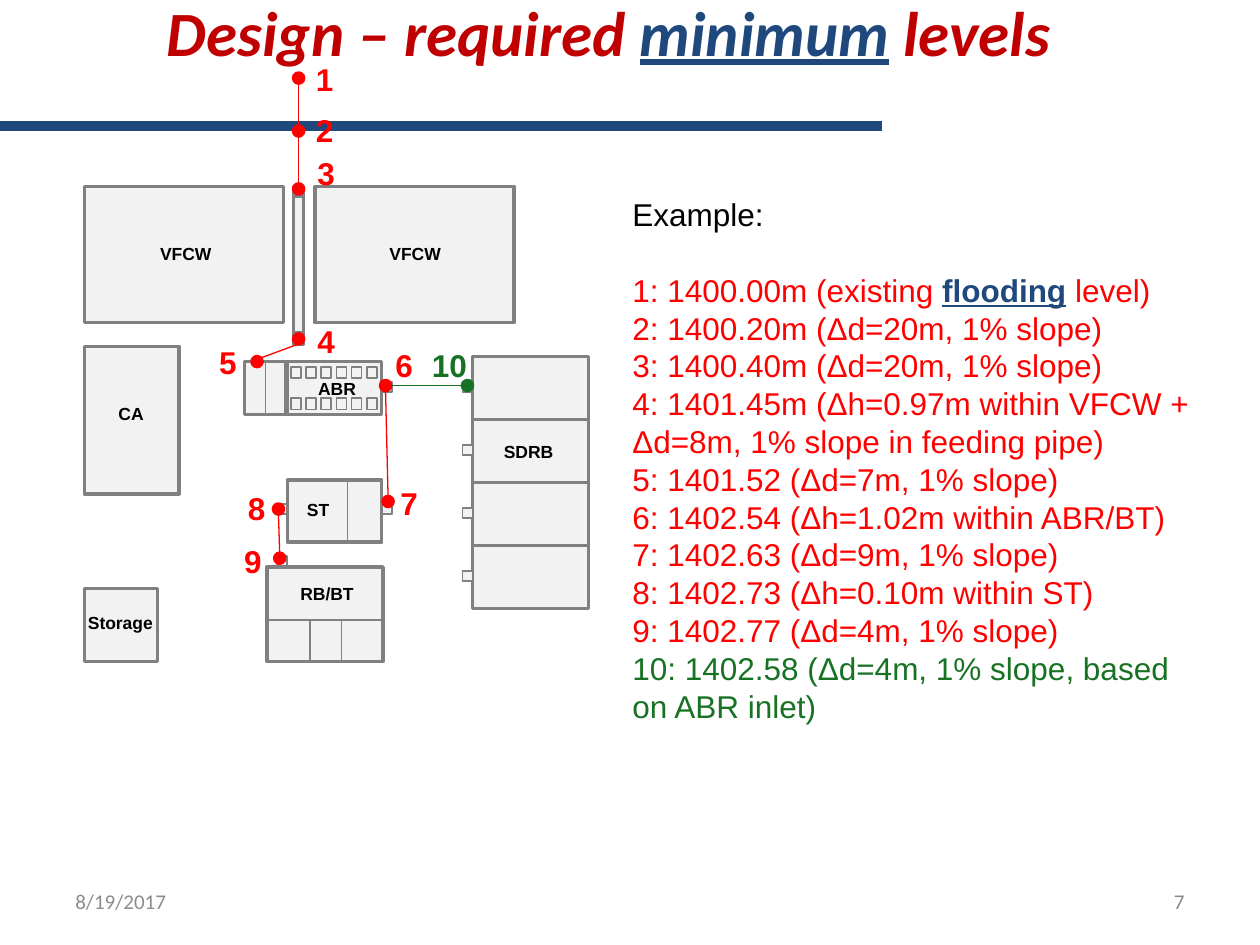
import pptx
import pptx.util
import pptx.dml.color
import pptx.enum.shapes
import pptx.enum.text
import pptx.oxml

RED, GREEN, NAVY, GREY, PALE = "FF0000", "187223", "1F497D", "808080", "F2F2F2"
LEFT, CENTER, RIGHT = (getattr(pptx.enum.text.PP_ALIGN, name) for name in ("LEFT", "CENTER", "RIGHT"))
MIDDLE = pptx.enum.text.MSO_ANCHOR.MIDDLE
RECTANGLE = pptx.enum.shapes.MSO_SHAPE.RECTANGLE
OVAL = pptx.enum.shapes.MSO_SHAPE.OVAL
UNIT = 0.08  # side of pipe ends, tabs and level dots
LINE_PITCH = 21.6

TITLE = [("Design – required ", "C00000", {}), ("minimum", NAVY, {"underline": True}),
         (" levels", "C00000", {})]
LEVELS = [
    [("1: 1400.00m (existing ", RED, {}), ("flooding", NAVY, {"bold": True, "underline": True}),
     (" level)", RED, {})],
    "2: 1400.20m (Δd=20m, 1% slope)",
    "3: 1400.40m (Δd=20m, 1% slope)",
    "4: 1401.45m (Δh=0.97m within VFCW + Δd=8m, 1% slope in feeding pipe)",
    "5: 1401.52 (Δd=7m, 1% slope)",
    "6: 1402.54 (Δh=1.02m within ABR/BT)",
    "7: 1402.63 (Δd=9m, 1% slope)",
    "8: 1402.73 (Δh=0.10m within ST)",
    "9: 1402.77 (Δd=4m, 1% slope)",
    [("10: 1402.58 (Δd=4m, 1% slope, based on ABR inlet)", GREEN, {})],
]
BED_TOPS = [2.83 + 0.5 * row for row in range(4)]
TANKS = [
    (0.67, 1.48, 1.58, 1.08), (2.5, 1.48, 1.58, 1.08),                    # VFCW
    (2.33, 1.48, UNIT, UNIT), (2.33, 2.65, UNIT, UNIT), (2.33, 1.56, UNIT, 1.08),  # feeding pipe
    *[(3.75, top, 0.92, 0.5) for top in BED_TOPS],                        # SDRB
    (2.28, 2.87, 0.75, 0.42), (1.94, 2.87, 0.33, 0.42),                   # ABR
    (2.28, 3.81, 0.75, 0.49),                                             # ST
    (2.12, 4.5, 0.92, 0.75),                                              # RB/BT
    (0.67, 4.67, 0.58, 0.58),                                             # Storage
    (0.67, 2.75, 0.75, 1.17),                                             # CA
]
TABS = [(3.67, top + 0.2) for top in BED_TOPS] + [(3.03, 3.03), (3.03, 4), (2.2, 4), (2.2, 4.41)]
CHAMBERS = [(2.31 + 0.12 * column, top) for top in (2.91, 3.16) for column in range(6)]
DIVIDERS = [(2.11, 3.28, 2.11, 2.87), (2.76, 3.81, 2.76, 4.31), (3.04, 4.92, 2.12, 4.92),
            (2.46, 5.25, 2.46, 4.92), (2.71, 5.25, 2.71, 4.92)]
TANK_LABELS = [  # text, left, top, width, fill
    ("VFCW", 1.06, 1.88, 0.83, PALE), ("VFCW", 2.88, 1.88, 0.83, PALE), ("SDRB", 3.78, 3.45, 0.83, PALE),
    ("ABR", 2.26, 2.95, 0.83, None), ("ST", 2.31, 3.91, 0.43, PALE), ("RB/BT", 2.22, 4.58, 0.75, PALE),
    ("Storage", 0.58, 4.81, 0.75, None), ("CA", 0.75, 3.15, 0.58, PALE),
]
POINTS = {  # level number: dot left, dot top, number left, number top
    1: (2.33, 0.58, 2.41, 0.43), 2: (2.33, 1, 2.41, 0.83), 3: (2.33, 1.46, 2.42, 1.17),
    4: (2.33, 2.65, 2.42, 2.51), 5: (2, 2.83, 1.64, 2.67), 6: (3.02, 3.02, 3.04, 2.7),
    7: (3.04, 3.94, 3.08, 3.79), 8: (2.17, 4, 1.87, 3.83), 9: (2.18, 4.39, 1.84, 4.25),
    10: (3.67, 3.02, 3.33, 2.7),
}
SITES = {"top": (0.5, 0), "bottom": (0.5, 1), "left": (0, 0.5), "right": (1, 0.5), "corner": (0.85, 0.15)}
PIPES = [(1, "bottom", 2, "top"), (2, "bottom", 3, "top"), (4, "bottom", 5, "corner"),
         (6, "bottom", 7, "top"), (8, "bottom", 9, "top"), (10, "left", 6, "right")]
WAVE_START = (0, 1.1)
WAVE = [  # two control points and an end point per curve
    ((0.39, 0.95), (0.78, 0.8), (1.39, 0.77)), ((1.99, 0.74), (2.95, 0.94), (3.63, 0.93)),
    ((4.3, 0.91), (4.84, 0.67), (5.44, 0.7)), ((6.04, 0.74), (6.91, 1.08), (7.24, 1.15)),
    ((7.56, 1.22), (7.34, 1.13), (7.37, 1.13)),
]

presentation = pptx.Presentation()
presentation.slide_width, presentation.slide_height = pptx.util.Inches(10), pptx.util.Inches(7.5)
slide = presentation.slides.add_slide(presentation.slide_layouts[6])


def inches(*values):
    return [pptx.util.Inches(value) for value in values]


def rgb(color):
    return pptx.dml.color.RGBColor.from_string(color)


def level_color(number):
    return GREEN if number == 10 else RED


def add_block(kind, box, fill, line, width):
    shape = slide.shapes.add_shape(kind, *inches(*box))
    shape.shadow.inherit = False
    shape.fill.solid()
    shape.fill.fore_color.rgb = rgb(fill)
    shape.line.color.rgb = rgb(line)
    shape.line.width = pptx.util.Pt(width)


def add_line(ends, color):
    connector = slide.shapes.add_connector(pptx.enum.shapes.MSO_CONNECTOR.STRAIGHT, *inches(*ends))
    connector.line.color.rgb = rgb(color)
    connector.line.width = pptx.util.Pt(0.75)
    properties = connector._element.spPr
    properties.append(properties.makeelement(pptx.oxml.ns.qn("a:effectLst"), {}))


def add_runs(paragraph, runs, size, font="Arial", **style):
    for text, color, extra in runs:
        run = paragraph.add_run()
        run.text = text
        run.font.name, run.font.size = font, pptx.util.Pt(size)
        run.font.color.rgb = rgb(color)
        for name, value in {**style, **extra}.items():
            setattr(run.font, name, value)


def add_text(box, runs, size, align=LEFT, anchor=None, fill=None, **style):
    shape = slide.shapes.add_textbox(*inches(*box))
    if fill:
        shape.fill.solid()
        shape.fill.fore_color.rgb = rgb(fill)
    frame = shape.text_frame
    frame.word_wrap = True
    if anchor is not None:
        frame.vertical_anchor = anchor
    frame.paragraphs[0].alignment = align
    add_runs(frame.paragraphs[0], runs, size, **style)
    return frame


def curve_points(start, curves, steps=24):
    """Points along a chain of cubic curves."""
    for first, second, end in curves:
        for step in range(1, steps + 1):
            t = step / steps
            weights = ((1 - t) ** 3, 3 * t * (1 - t) ** 2, 3 * t * t * (1 - t), t ** 3)
            corners = (start, first, second, end)
            yield tuple(sum(w * corner[axis] for w, corner in zip(weights, corners)) for axis in (0, 1))
        start = end


def add_wave():
    builder = slide.shapes.build_freeform(*WAVE_START, scale=pptx.util.Inches(1))
    builder.add_line_segments(list(curve_points(WAVE_START, WAVE)), close=False)
    wave = builder.convert_to_shape()
    wave.shadow.inherit = False
    wave.fill.background()
    wave.line.color.rgb = rgb(NAVY)
    wave.line.width = pptx.util.Pt(6)


def add_levels():
    frame = add_text((4.92, 1.5, 4.67, 4.34), [("Example:", "000000", {})], 18)
    for index, level in enumerate(LEVELS):
        paragraph = frame.add_paragraph()
        if index == 0:
            paragraph.space_before = pptx.util.Pt(LINE_PITCH)
        add_runs(paragraph, [(level, RED, {})] if isinstance(level, str) else level, 18)
    for paragraph in frame.paragraphs:
        paragraph.line_spacing = pptx.util.Pt(LINE_PITCH)


def site(number, side):
    left, top = POINTS[number][:2]
    across, down = SITES[side]
    return left + across * UNIT, top + down * UNIT


add_text((0.33, -0.17, 9, 0.83), TITLE, 36, CENTER, MIDDLE, font="Calibri", bold=True, italic=True)
add_text((0.5, 6.95, 2.33, 0.4), [("8/19/2017", "8C8C8C", {})], 12, LEFT, MIDDLE, font="Calibri")
add_text((7.17, 6.95, 2.33, 0.4), [("7", "898989", {})], 12, RIGHT, MIDDLE, font="Calibri")
for tank in TANKS:
    add_block(RECTANGLE, tank, PALE, GREY, 2)
for left, top in TABS:
    add_block(RECTANGLE, (left, top, UNIT, UNIT), PALE, GREY, 1)
for left, top in CHAMBERS:
    add_block(RECTANGLE, (left, top, UNIT, 0.09), PALE, GREY, 1)
for divider in DIVIDERS:
    add_line(divider, GREY)
for text, left, top, width, fill in TANK_LABELS:
    add_text((left, top, width, 0.27), [(text, "000000", {})], 10, CENTER, fill=fill, bold=True)
add_wave()
add_levels()
for number, (left, top, text_left, text_top) in POINTS.items():
    color = level_color(number)
    add_block(OVAL, (left, top, UNIT, UNIT), color, color, 2)
    add_text((text_left, text_top, 0.5, 0.42), [(str(number), color, {})], 18, bold=True)
for start, start_side, end, end_side in PIPES:
    add_line(site(start, start_side) + site(end, end_side), level_color(start))

presentation.save("out.pptx")
